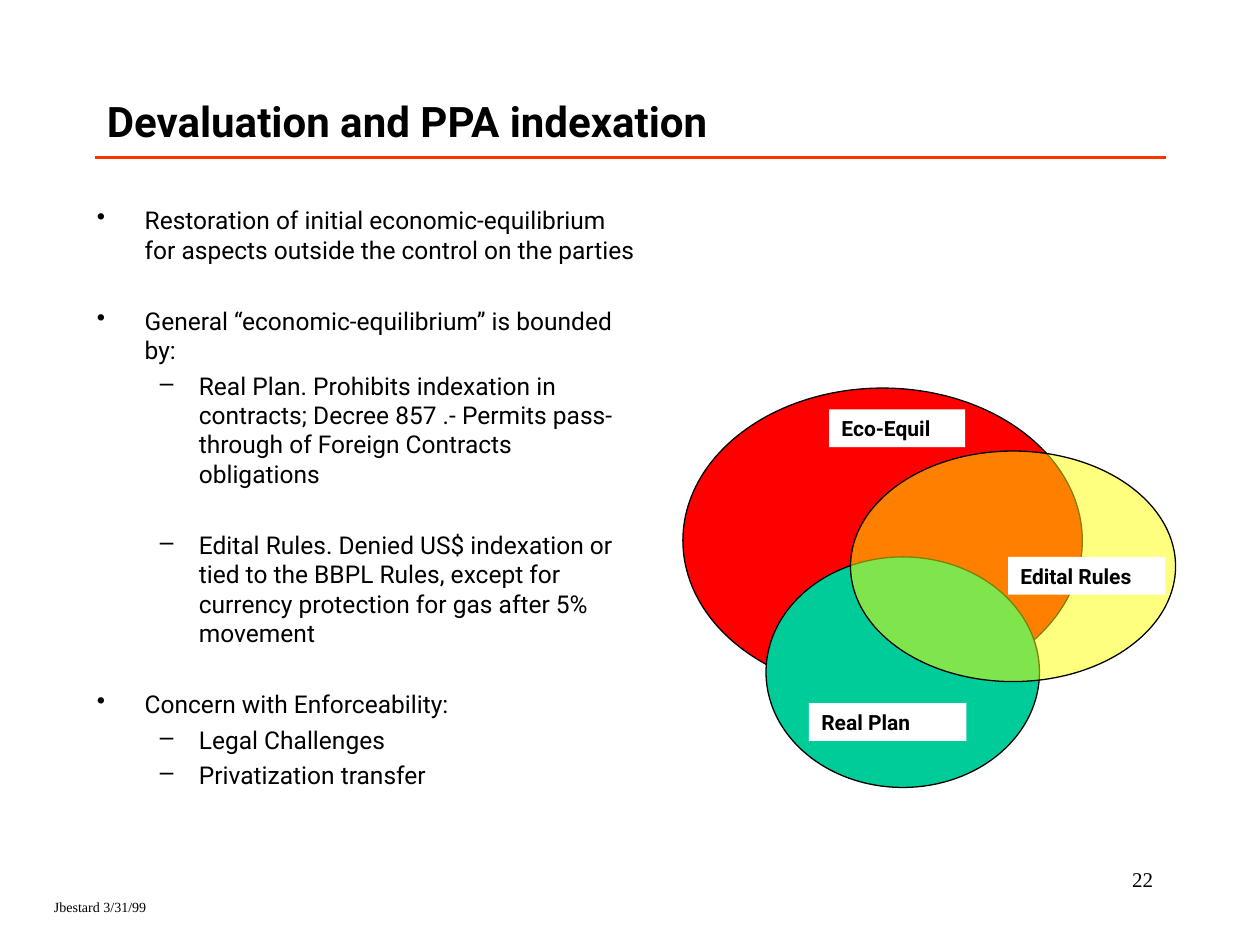
from dataclasses import dataclass

import pptx
import pptx.dml.color
import pptx.enum.shapes
import pptx.enum.text
import pptx.oxml
import pptx.oxml.ns
import pptx.util
from pptx.dml.color import RGBColor
from pptx.util import Inches

BLACK = RGBColor(0, 0, 0)
WHITE = RGBColor(0xFF, 0xFF, 0xFF)
RULE_RED = RGBColor(0xFF, 0x33, 0x00)
RED = RGBColor(0xFF, 0, 0)
GREEN = RGBColor(0, 0xCC, 0x99)
YELLOW = RGBColor(0xFF, 0xFF, 0)

SANS = "Roboto"
SERIF = "Times New Roman"
ITEM_GAP = 3.5
SECTION_GAP = 23.75

Frame = tuple[float, float, float, float]


@dataclass
class Caption:
    text: str
    frame: Frame
    size: float
    font: str
    bold: bool = False
    align: pptx.enum.text.PP_ALIGN = pptx.enum.text.PP_ALIGN.LEFT
    anchor: pptx.enum.text.MSO_ANCHOR = pptx.enum.text.MSO_ANCHOR.TOP
    fill: RGBColor | None = None


@dataclass
class Point:
    text: str
    level: int = 0
    gap: float = ITEM_GAP


@dataclass
class Circle:
    frame: Frame
    fill: RGBColor
    opacity: int = 100


@dataclass
class BulletStyle:
    symbol: str
    margin: float
    hanging: float


BULLETS = [BulletStyle("•", 0.38, 0.38), BulletStyle("–", 0.81, 0.31)]

CAPTIONS = [
    Caption("Jbestard 3/31/99", (0.33, 7.08, 1.17, 0.24), 8, SERIF),
    Caption("Devaluation and PPA indexation", (0.75, 0.58, 8.5, 0.75), 24, SANS,
            bold=True, anchor=pptx.enum.text.MSO_ANCHOR.MIDDLE),
    Caption("22", (7.17, 6.83, 2.08, 0.5), 12, SERIF,
            align=pptx.enum.text.PP_ALIGN.RIGHT),
]

POINTS = [
    Point("Restoration of initial economic-equilibrium for aspects outside "
          "the control on the parties", gap=0),
    Point("General “economic-equilibrium” is bounded by:", gap=SECTION_GAP),
    Point("Real Plan. Prohibits indexation in contracts; Decree 857 .- Permits "
          "pass-through of Foreign Contracts obligations", 1),
    Point("Edital Rules. Denied US$ indexation or tied to the BBPL Rules, except "
          "for currency protection for gas after 5% movement", 1, SECTION_GAP),
    Point("Concern with Enforceability:", gap=SECTION_GAP),
    Point("Legal Challenges", 1),
    Point("Privatization transfer", 1),
]

CIRCLES = [
    Circle((5.42, 3.08, 3.17, 2.42), RED),
    Circle((6.08, 4.42, 2.17, 1.83), GREEN),
    Circle((6.75, 3.58, 2.58, 1.83), YELLOW, opacity=50),
]

CIRCLE_LABELS = [
    Caption(text, frame, 12, SANS, bold=True, fill=WHITE)
    for text, frame in [
        ("Eco-Equil", (6.58, 3.25, 1.08, 0.3)),
        ("Edital Rules", (8, 4.42, 1.25, 0.3)),
        ("Real Plan", (6.42, 5.58, 1.25, 0.3)),
    ]
]


def set_font(paragraph, name: str, size: float, bold: bool = False) -> None:
    font = paragraph.font
    font.name = name
    font.size = pptx.util.Pt(size)
    font.bold = bold
    font.color.rgb = BLACK


def add_child(parent, tag: str, **attributes: str):
    child = pptx.oxml.parse_xml(f"<{tag} {pptx.oxml.ns.nsdecls('a')}/>")
    for name, value in attributes.items():
        child.set(name, value)
    parent.append(child)
    return child


def add_text_box(page, frame: Frame):
    box = page.shapes.add_textbox(*map(Inches, frame))
    box.text_frame.word_wrap = True
    return box


def add_caption(page, caption: Caption) -> None:
    box = add_text_box(page, caption.frame)
    if caption.fill is not None:
        box.fill.solid()
        box.fill.fore_color.rgb = caption.fill
    box.text_frame.vertical_anchor = caption.anchor
    paragraph = box.text_frame.paragraphs[0]
    paragraph.text = caption.text
    paragraph.alignment = caption.align
    set_font(paragraph, caption.font, caption.size, caption.bold)


def add_points(page, frame: Frame, points: list[Point]) -> None:
    text_frame = add_text_box(page, frame).text_frame
    for index, point in enumerate(points):
        paragraph = text_frame.add_paragraph() if index else text_frame.paragraphs[0]
        paragraph.text = point.text
        paragraph.level = point.level
        style = BULLETS[point.level]
        properties = paragraph._p.get_or_add_pPr()
        properties.set("marL", str(Inches(style.margin)))
        properties.set("indent", str(-Inches(style.hanging)))
        add_child(properties, "a:buChar", char=style.symbol)
        paragraph.space_before = pptx.util.Pt(point.gap)
        set_font(paragraph, SANS, 14)


def add_circle(page, circle: Circle) -> None:
    oval = page.shapes.add_shape(
        pptx.enum.shapes.MSO_SHAPE.OVAL, *map(Inches, circle.frame))
    oval.shadow.inherit = False
    oval.fill.solid()
    oval.fill.fore_color.rgb = circle.fill
    oval.line.color.rgb = BLACK
    oval.line.width = pptx.util.Pt(0.75)
    if circle.opacity < 100:
        color = oval._element.spPr.find(pptx.oxml.ns.qn("a:solidFill"))[0]
        add_child(color, "a:alpha", val=str(circle.opacity * 1000))


def add_title_rule(page) -> None:
    rule = page.shapes.add_connector(
        pptx.enum.shapes.MSO_CONNECTOR.STRAIGHT,
        Inches(0.75), Inches(1.25), Inches(9.25), Inches(1.25))
    rule.line.color.rgb = RULE_RED
    rule.line.width = pptx.util.Pt(2.25)
    add_child(rule._element.spPr, "a:effectLst")


def main() -> None:
    deck = pptx.Presentation()
    deck.slide_width = Inches(10)
    deck.slide_height = Inches(7.5)
    page = deck.slides.add_slide(deck.slide_layouts[6])
    add_title_rule(page)
    for caption in CAPTIONS:
        add_caption(page, caption)
    add_points(page, (0.67, 1.58, 4.5, 5), POINTS)
    for circle in CIRCLES:
        add_circle(page, circle)
    for label in CIRCLE_LABELS:
        add_caption(page, label)
    deck.save("out.pptx")


if __name__ == "__main__":
    main()
